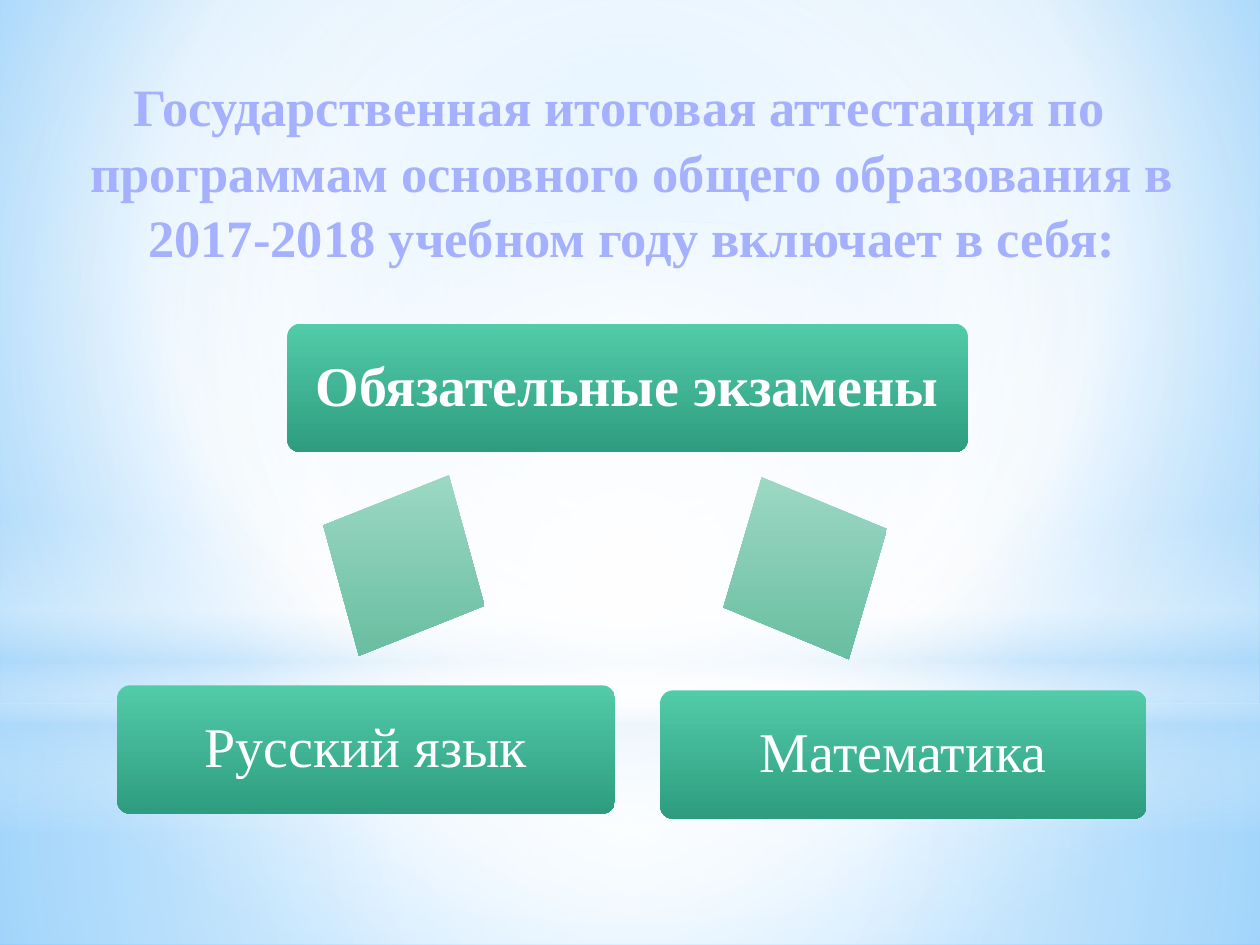
import lxml.etree
import pptx
import pptx.dml.color
import pptx.enum.shapes
import pptx.enum.text
import pptx.oxml.ns
import pptx.util

Pt = pptx.util.Pt
qn = pptx.oxml.ns.qn
SHAPE = pptx.enum.shapes.MSO_SHAPE
ANCHOR = pptx.enum.text.MSO_ANCHOR
CENTER = pptx.enum.text.PP_ALIGN.CENTER

FONT = "Times New Roman"
BOX_GREEN = [(0, "52CBA9"), (100, "2E9D7F")]
ARROW_GREEN = [(0, "A7DECB"), (100, "5EB899")]
MIDDLE = (50, 50, 50, 50)


def color(value):
    return pptx.dml.color.RGBColor.from_string(value)


def set_gradient(fill, element, stops, focus=None):
    """Stops are (position, colour[, opacity]); a focus makes it circular."""
    fill.gradient()
    grad = next(element.iter(qn("a:gradFill")))
    for child in list(grad):
        grad.remove(child)
    grad.set("rotWithShape", "0")
    stop_list = lxml.etree.SubElement(grad, qn("a:gsLst"))
    for position, value, *opacity in stops:
        stop = lxml.etree.SubElement(stop_list, qn("a:gs"), pos=str(position * 1000))
        clr = lxml.etree.SubElement(stop, qn("a:srgbClr"), val=value)
        if opacity:
            lxml.etree.SubElement(clr, qn("a:alpha"), val=str(opacity[0] * 1000))
    if focus:
        circle = lxml.etree.SubElement(grad, qn("a:path"), path="circle")
        sides = {side: str(v * 1000) for side, v in zip("ltrb", focus)}
        lxml.etree.SubElement(circle, qn("a:fillToRect"), **sides)
    else:
        lxml.etree.SubElement(grad, qn("a:lin"), ang="5400000", scaled="0")


def add_gradient_shape(s, kind, x, y, w, h, stops, focus=None):
    sp = s.shapes.add_shape(kind, Pt(x), Pt(y), Pt(w), Pt(h))
    sp.shadow.inherit = False
    sp.line.fill.background()
    set_gradient(sp.fill, sp._element, stops, focus)
    return sp


def add_backdrop(s, x, y, w, h):
    set_gradient(s.background.fill, s._element,
                 [(0, "9ED5FF"), (60, "FFFFFF"), (100, "5BB9FF")], (20, 10, 20, 60))
    horizon = 401.8
    # Floor and sky
    add_gradient_shape(s, SHAPE.RECTANGLE, x, y + horizon, w, h - horizon,
                       [(0, "FFFFFF", 91), (37, "FFFFFF", 76), (100, "B4DCFA", 79)], MIDDLE)
    add_gradient_shape(s, SHAPE.RECTANGLE, x, y, w, horizon,
                       [(0, "FFFFFF", 89), (48, "FFFFFF", 62), (100, "B4DCFA", 79)], MIDDLE)
    # Horizon haze
    add_gradient_shape(s, SHAPE.RECTANGLE, x, y + 296.6, w, 180,
                       [(0, "FFFFFF", 0), (29, "FFFFFF", 30), (45, "B4DCFA", 40),
                        (55, "FFFFFF", 26), (65, "B4DCFA", 60), (100, "FFFFFF", 0)])
    # Central glow
    add_gradient_shape(s, SHAPE.OVAL, x, y + 126, w, horizon,
                       [(0, "FFFFFF", 100), (56, "FFFFFF", 0)], MIDDLE)


def add_heading(s, x, y, w, h):
    s.shapes.title._element.getparent().remove(s.shapes.title._element)
    body = s.placeholders[1]
    body._element.getparent().append(body._element)  # in front of the backdrop
    body.left, body.top, body.width, body.height = Pt(x), Pt(y), Pt(w), Pt(h)
    tf = body.text_frame
    tf.auto_size = pptx.enum.text.MSO_AUTO_SIZE.NONE
    tf.vertical_anchor = ANCHOR.TOP
    tf.text = ("Государственная итоговая аттестация по программам основного общего "
               "образования в 2017-2018 учебном году включает в себя:")
    p = tf.paragraphs[0]
    p.alignment = CENTER
    p.line_spacing = 1.04
    p.space_after = Pt(3)
    p.font.name, p.font.size, p.font.bold = FONT, Pt(30), True
    p.font.color.rgb = color("A5B0FF")
    p_pr = p._p.get_or_add_pPr()
    p_pr.set("marL", str(Pt(18)))
    p_pr.set("indent", str(-Pt(14.4)))
    # buNone must come before the default run properties
    p_pr.find(qn("a:defRPr")).addprevious(lxml.etree.Element(qn("a:buNone")))


def add_exam_box(s, x, y, w, h, text, bold=False):
    sp = add_gradient_shape(s, SHAPE.ROUNDED_RECTANGLE, x, y, w, h, BOX_GREEN)
    sp.adjustments[0] = 0.1
    tf = sp.text_frame
    tf.word_wrap = True
    tf.vertical_anchor = ANCHOR.MIDDLE
    tf.margin_left = tf.margin_right = tf.margin_top = tf.margin_bottom = Pt(11.5)
    tf.text = text
    p = tf.paragraphs[0]
    p.alignment = CENTER
    p.line_spacing = 0.9
    p.font.name, p.font.size, p.font.bold = FONT, Pt(32), bold
    p.font.color.rgb = color("FFFFFF")


def add_arrow(s, x, y, w, h, rotation):
    sp = add_gradient_shape(s, SHAPE.LEFT_RIGHT_ARROW, x, y, w, h, ARROW_GREEN)
    sp.adjustments[0], sp.adjustments[1] = 0.6, 0.5
    sp.rotation = rotation


def add_exam_diagram(s, x, y):
    box_h = 73.4
    add_exam_box(s, x + 97.2, y, 388.8, box_h, "Обязательные экзамены", bold=True)
    add_arrow(s, x + 341.3, y + 82.1, 103.7, 115.2, 334.4)
    add_exam_box(s, x + 310.3, y + 209.5, 277.9, box_h, "Математика")
    add_exam_box(s, x, y + 206.6, 284.4, box_h, "Русский язык")
    add_arrow(s, x + 112.3, y + 80.6, 103, 115.2, 26.5)


def main():
    prs = pptx.Presentation()
    prs.slide_width, prs.slide_height = Pt(720), Pt(540)
    s = prs.slides.add_slide(prs.slide_layouts[1])
    add_backdrop(s, 0, 0, 720, 540)
    add_heading(s, 20.2, 37.4, 663.8, 435.6)
    add_exam_diagram(s, 67, 185)
    prs.save("out.pptx")


if __name__ == "__main__":
    main()
